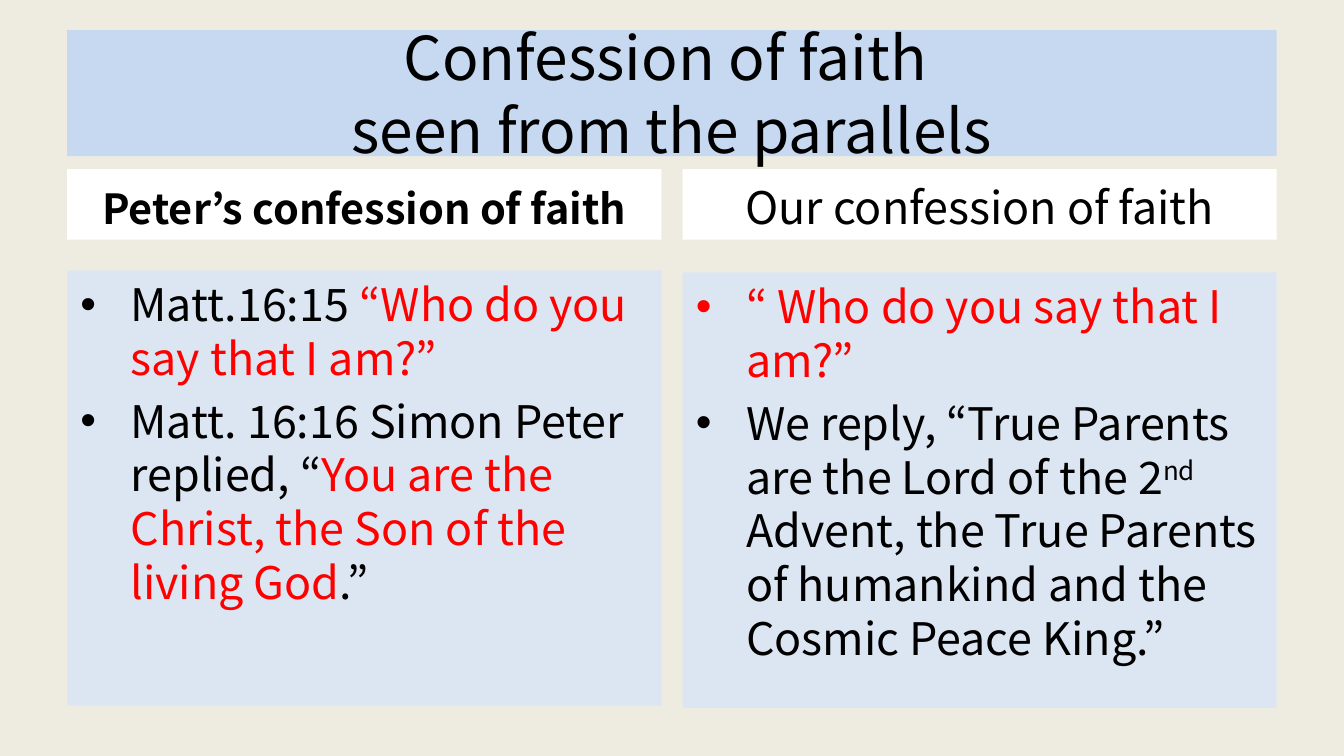
from lxml import etree
from pptx import Presentation
from pptx.dml.color import RGBColor
from pptx.enum.text import MSO_ANCHOR, MSO_AUTO_SIZE, PP_ALIGN
from pptx.oxml.ns import qn
from pptx.util import Cm, Pt

TOP, MIDDLE, BOTTOM = MSO_ANCHOR.TOP, MSO_ANCHOR.MIDDLE, MSO_ANCHOR.BOTTOM
CENTER, LEFT = PP_ALIGN.CENTER, PP_ALIGN.LEFT
FIXED = MSO_AUTO_SIZE.NONE

COLORS = {"back": "EEECE1", "title": "C6D9F1", "head": "FFFFFF",
          "body": "DCE6F2", "text": "000000", "quote": "FF0000"}
FONT = "Noto Sans CJK KR"
TITLE = "Confession of faith \vseen from the parallels"
COLUMNS = [
    {"head": "Peter’s confession of faith", "font": "Noto Sans CJK JP",
     "size": 22.2, "bold": True, "top": 5.11,
     "items": [
         [("Matt.16:15 ", "text"), ("“Who do you say that I am?”", "quote")],
         [("Matt. 16:16 Simon Peter replied, “", "text"),
          ("You are the Christ, the Son of the living God", "quote"),
          (".”", "text")]]},
    {"head": "Our confession of faith", "font": FONT,
     "size": 24, "bold": False, "top": 5.15,
     "items": [
         [("“ Who do you say that I am?”", "quote")],
         [("We reply, “True Parents are the Lord of the 2", "text"),
          ("nd", "super"),
          (" Advent, the True Parents of humankind and the Cosmic Peace King.”",
           "text")]]},
]
EDGE, WIDTH, GAP = 1.27, 22.86, 0.4
SPAN = (WIDTH - GAP) / 2


def color(key):
    return RGBColor.from_string(COLORS[key])


def place(shape, left, top, width, height, fill, anchor):
    shape.left, shape.top = Cm(left), Cm(top)
    shape.width, shape.height = Cm(width), Cm(height)
    shape.fill.solid()
    shape.fill.fore_color.rgb = color(fill)
    frame = shape.text_frame
    frame.word_wrap = True
    frame.auto_size = FIXED
    frame.vertical_anchor = anchor
    return frame


def style(run, size, tone="text", name=FONT, bold=False):
    font = run.font
    font.name, font.size, font.bold = name, Pt(size), bold
    font.color.rgb = color(tone)


def add_box(slide, *area):
    return place(slide.shapes.add_textbox(0, 0, 0, 0), *area)


def add_bullet(para):
    props = para._p.get_or_add_pPr()
    props.set("marL", str(Cm(0.95)))
    props.set("indent", str(Cm(-0.95)))
    face = etree.SubElement(props, qn("a:buFont"))
    face.set("typeface", "Arial")
    etree.SubElement(props, qn("a:buChar")).set("char", "•")


def add_items(frame, items):
    for i, parts in enumerate(items):
        para = frame.add_paragraph() if i else frame.paragraphs[0]
        add_bullet(para)
        para.alignment = LEFT
        if i:
            para.space_before = Pt(4.8)
        for text, kind in parts:
            run = para.add_run()
            run.text = text
            style(run, 24, "quote" if kind == "quote" else "text")
            if kind == "super":
                run.font._element.set("baseline", "30000")


def main():
    deck = Presentation()
    deck.slide_width, deck.slide_height = Cm(25.4), Cm(14.29)
    slide = deck.slides.add_slide(deck.slide_layouts[5])
    slide.background.fill.solid()
    slide.background.fill.fore_color.rgb = color("back")

    frame = place(slide.shapes.title, EDGE, 0.57, WIDTH, 2.38, "title", MIDDLE)
    frame.text = TITLE
    frame.paragraphs[0].alignment = CENTER
    for run in frame.paragraphs[0].runs:
        style(run, 32.4)

    for i, col in enumerate(COLUMNS):
        left = EDGE + i * (SPAN + GAP)
        frame = add_box(slide, left, 3.2, SPAN, 1.33, "head", BOTTOM)
        frame.text = col["head"]
        para = frame.paragraphs[0]
        para.alignment = CENTER
        style(para.runs[0], col["size"], name=col["font"], bold=col["bold"])
        frame = add_box(slide, left, col["top"], SPAN, 8.23, "body", TOP)
        add_items(frame, col["items"])

    deck.save("out.pptx")


if __name__ == "__main__":
    main()
